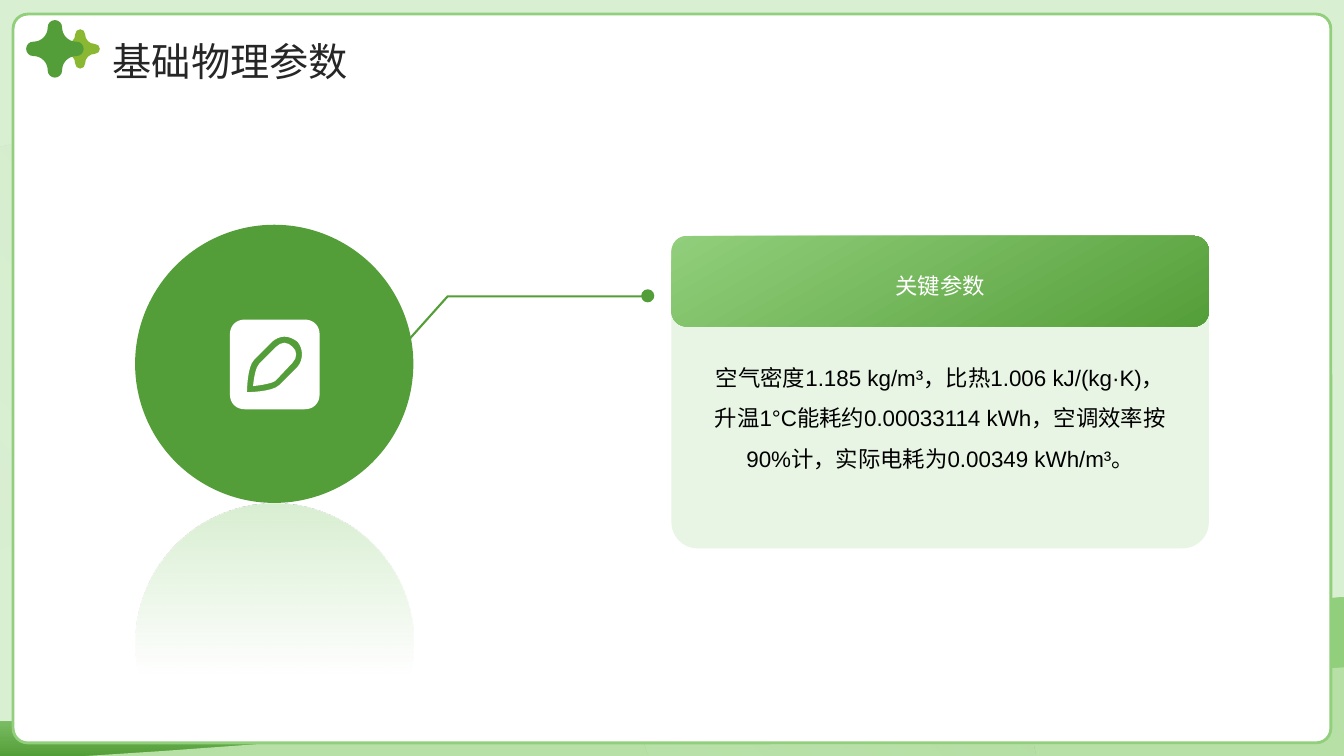
from lxml.etree import SubElement
from pptx import Presentation
from pptx.dml.color import RGBColor
from pptx.enum.shapes import MSO_SHAPE as Preset
from pptx.enum.text import MSO_ANCHOR as Anchor, PP_ALIGN as Align
from pptx.oxml.ns import qn
from pptx.util import Inches, Pt

PALE = RGBColor(0xD9, 0xEF, 0xD2)
SOFT = RGBColor(0xB6, 0xE0, 0xA6)
LIGHT = RGBColor(0x92, 0xCF, 0x7C)
GREEN = RGBColor(0x54, 0x9E, 0x39)
LIME = RGBColor(0x8A, 0xB8, 0x33)
WHITE = RGBColor(0xFF, 0xFF, 0xFF)
BLACK = RGBColor(0, 0, 0)
DARK = RGBColor(0x26, 0x26, 0x26)

TITLE = "基础物理参数"
CARD_TITLE = "关键参数"
CARD_BODY = ("空气密度1.185 kg/m³，比热1.006 kJ/(kg·K)，升温1°C能耗约0.00033114 kWh，"
             "空调效率按90%计，实际电耗为0.00349 kWh/m³。")

WIDTH, HEIGHT = 13.33, 7.5
CARD_LEFT, CARD_WIDTH, TEXT_MARGIN = 6.66, 5.33, 0.35
BALL_LEFT, BALL_TOP, BALL_SIZE = 1.34, 2.23, 2.76

HILL = [(13.33, 5.92), (13.33, 7.5), (0, 7.5), (0, 7.16), (0.13, 7.16),
        (4.08, 7.09, 9.13, 6.34, 12.7, 5.98)]
MEADOW = [(13.33, 6.62), (13.33, 7.5), (0.85, 7.5), (1.62, 7.45),
          (5.62, 7.16, 9.43, 6.89, 12.83, 6.66)]
ARCH = [(2.35, 1.12), (1.65, 1.12, 0.97, 1.21, 0.33, 1.38), (0, 1.47), (0, 5.47),
        (0.05, 5.44), (0.72, 5.03, 1.51, 4.8, 2.35, 4.8),
        (4.12, 4.8, 5.64, 5.82, 6.36, 7.31), (6.44, 7.5), (10.28, 7.5),
        (10.21, 7.21), (9.31, 3.71, 6.13, 1.12, 2.35, 1.12)]
LEADER = [(3.84, 3.61), (4.44, 2.94), (6.42, 2.94)]
PENCIL_INSIDE = [(2.82, 3.4), (2.85, 3.4, 2.88, 3.42, 2.9, 3.44),
                 (2.95, 3.48, 2.95, 3.55, 2.9, 3.6), (2.73, 3.78),
                 (2.7, 3.8, 2.61, 3.82, 2.51, 3.83),
                 (2.52, 3.73, 2.54, 3.64, 2.57, 3.61), (2.74, 3.44),
                 (2.76, 3.42, 2.79, 3.4, 2.82, 3.4)]
PENCIL_EDGE = [(2.82, 3.34), (2.78, 3.34, 2.73, 3.36, 2.7, 3.39), (2.52, 3.57),
               (2.45, 3.64, 2.45, 3.89, 2.45, 3.89),
               (2.45, 3.89, 2.7, 3.89, 2.77, 3.82), (2.95, 3.64),
               (3.01, 3.57, 3.01, 3.46, 2.95, 3.39),
               (2.91, 3.36, 2.87, 3.34, 2.82, 3.34)]
ICON_TILE = [(2.43, 3.17), (3.02, 3.17), (3.11, 3.17, 3.17, 3.23, 3.17, 3.32),
             (3.17, 3.91), (3.17, 4, 3.11, 4.06, 3.02, 4.06), (2.43, 4.06),
             (2.34, 4.06, 2.28, 4, 2.28, 3.91), (2.28, 3.32),
             (2.28, 3.23, 2.34, 3.17, 2.43, 3.17)]
SPARKLE_ARM = [(0.47, -0.25, 0.25, -0.47, 0.25, -0.75),
               (0.25, -0.89, 0.14, -1, 0, -1),
               (-0.14, -1, -0.25, -0.89, -0.25, -0.75)]
SPARKLES = [(0.6, 0.29, 0.39, LIME), (0.26, 0.2, 0.57, GREEN)]


def set_alpha(color, percent):
    if percent < 100:
        SubElement(color, qn("a:alpha")).set("val", str(percent * 1000))


def paint(shape, color=None, alpha=100, stops=(), angle=0, line=None, weight=0):
    shape.shadow.inherit = False
    properties = shape._element.spPr
    if stops:
        shape.fill.gradient()
        gradient = properties.find(qn("a:gradFill"))
        stop_list = gradient.find(qn("a:gsLst"))
        for stop in list(stop_list):
            stop_list.remove(stop)
        for place, tint, opacity in stops:
            stop = SubElement(stop_list, qn("a:gs"), pos=str(place * 1000))
            set_alpha(SubElement(stop, qn("a:srgbClr"), val=str(tint)), opacity)
        gradient.find(qn("a:lin")).set("ang", str(angle * 60000))
    elif color is not None:
        shape.fill.solid()
        shape.fill.fore_color.rgb = color
        set_alpha(properties.find(qn("a:solidFill"))[0], alpha)
    else:
        shape.fill.background()
    if line is not None:
        shape.line.color.rgb = line
        shape.line.width = Pt(weight)
    else:
        shape.line.fill.background()


def add_preset(kind, left, top, width, height, corner=None, **look):
    shape = page.shapes.add_shape(kind, Inches(left), Inches(top), Inches(width), Inches(height))
    if corner is not None:
        shape.adjustments[0] = corner
    paint(shape, **look)


def add_outline(*outlines, closed=True, **look):
    contours = [[(Inches(step[-2]), Inches(step[-1])) for step in outline] for outline in outlines]
    builder = page.shapes.build_freeform(*contours[0][0])
    for index, points in enumerate(contours):
        if index:
            builder.move_to(*points[0])
        builder.add_line_segments(points[1:], close=closed)
    shape = builder.convert_to_shape()
    segments = list(shape._element.spPr.iter(qn("a:lnTo")))
    steps = [step for outline in outlines for step in outline[1:]]
    for segment, step in zip(segments, steps):
        if len(step) == 6:
            segment.tag = qn("a:cubicBezTo")
            end = segment[0]
            for x, y in (step[:2], step[2:4]):
                control = SubElement(segment, qn("a:pt"))
                control.set("x", str(Inches(x) - shape.left))
                control.set("y", str(Inches(y) - shape.top))
            segment.append(end)
    paint(shape, **look)


def sparkle(left, top, size):
    radius = size / 2
    center = (left + radius, top + radius)
    outline = [(0.75, -0.25)]
    arm = SPARKLE_ARM
    for _ in range(4):
        outline += arm
        arm = [tuple(n for x, y in zip(step[::2], step[1::2]) for n in (y, -x)) for step in arm]
    return [tuple(n * radius + center[i % 2] for i, n in enumerate(step)) for step in outline]


def add_text(text, left, top, width, height, size, color, spacing, align=Align.LEFT,
             anchor=Anchor.TOP, inset=(0, 0)):
    frame = page.shapes.add_textbox(Inches(left), Inches(top), Inches(width),
                                    Inches(height)).text_frame
    frame.word_wrap = True
    frame.vertical_anchor = anchor
    frame.margin_left = frame.margin_right = Inches(inset[0])
    frame.margin_top = frame.margin_bottom = Inches(inset[1])
    para = frame.paragraphs[0]
    para.text = text
    para.alignment = align
    para.line_spacing = spacing
    para.font.name = "Arial"
    para.font.size = Pt(size)
    para.font.color.rgb = color


deck = Presentation()
deck.slide_width, deck.slide_height = Inches(WIDTH), Inches(HEIGHT)
page = deck.slides.add_slide(deck.slide_layouts[6])

add_preset(Preset.RECTANGLE, 0, 0, WIDTH, HEIGHT, color=PALE)
add_outline(HILL, stops=[(0, LIGHT, 100), (65, LIGHT, 100), (100, GREEN, 100)], angle=90)
add_outline(MEADOW, color=SOFT)
add_outline(ARCH, stops=[(0, LIGHT, 37), (85, PALE, 10), (100, PALE, 10)], angle=135)
add_preset(Preset.ROUNDED_RECTANGLE, 0.13, 0.14, 13.07, 7.23, corner=0.02,
           color=WHITE, line=LIGHT, weight=2)

add_preset(Preset.ROUNDED_RECTANGLE, CARD_LEFT, 2.8, CARD_WIDTH, 2.64, corner=0.098,
           color=PALE, alpha=60)
add_preset(Preset.OVAL, BALL_LEFT, BALL_TOP, BALL_SIZE, BALL_SIZE, color=GREEN)
add_outline(LEADER, closed=False, line=GREEN, weight=1.5)
add_preset(Preset.OVAL, 6.36, 2.87, 0.13, 0.13, color=GREEN)
add_preset(Preset.ROUNDED_RECTANGLE, CARD_LEFT, 2.34, CARD_WIDTH, 0.9, corner=0.167,
           stops=[(0, LIGHT, 100), (100, GREEN, 100)], angle=60)
text_left, text_width = CARD_LEFT + TEXT_MARGIN, CARD_WIDTH - 2 * TEXT_MARGIN
add_text(CARD_TITLE, text_left, 2.44, text_width, 0.71, 16, WHITE, 1.3,
         Align.CENTER, Anchor.MIDDLE)
add_text(CARD_BODY, text_left, 3.48, text_width, 1.76, 16, BLACK, 1.5, Align.CENTER)

add_outline(PENCIL_INSIDE, PENCIL_EDGE, ICON_TILE, color=WHITE)
add_preset(Preset.OVAL, BALL_LEFT, BALL_TOP + BALL_SIZE + 0.01, BALL_SIZE, BALL_SIZE,
           stops=[(0, PALE, 100), (61, PALE, 0), (100, PALE, 0)], angle=90)

add_text(TITLE, 1.02, 0.18, 11.38, 0.57, 28, DARK, 1.3, inset=(0.1, 0.05))
for left, top, size, color in SPARKLES:
    add_outline(sparkle(left, top, size), color=color)

deck.save("out.pptx")
